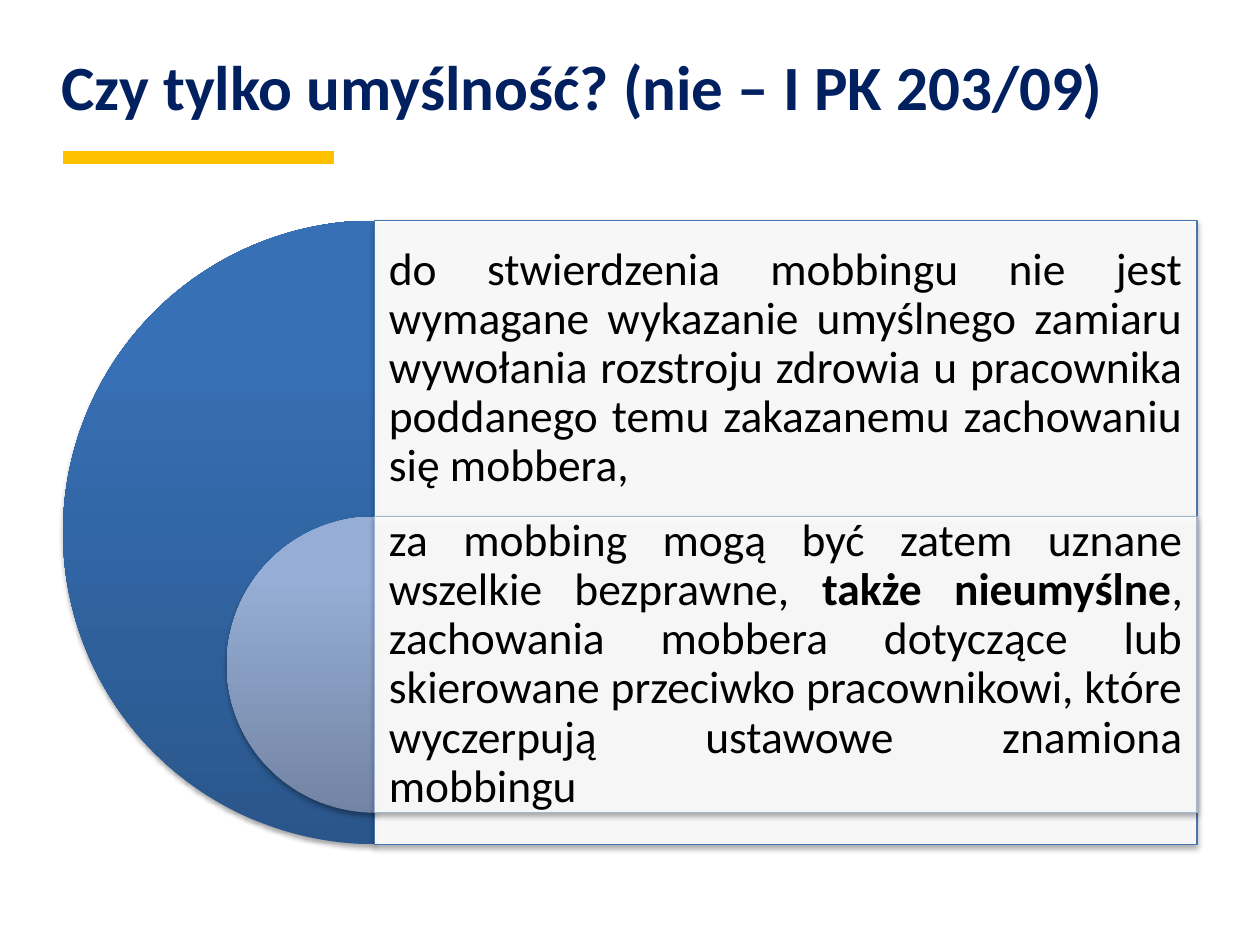
from lxml.etree import SubElement
from pptx import Presentation
from pptx.dml.color import RGBColor
from pptx.enum.shapes import MSO_CONNECTOR, MSO_SHAPE
from pptx.enum.text import MSO_ANCHOR, PP_ALIGN
from pptx.oxml.ns import qn
from pptx.util import Pt

CENTER_X = 214.2
RIGHT = 684
TOP = 126
OUTER = 356.4
INNER = 169.2

FIRST = [("do stwierdzenia mobbingu nie jest wymagane wykazanie umyślnego zamiaru "
          "wywołania rozstroju zdrowia u pracownika poddanego temu zakazanemu "
          "zachowaniu się mobbera,", False)]
SECOND = [("za mobbing mogą być zatem uznane wszelkie bezprawne, ", False),
          ("także nieumyślne", True),
          (", zachowania mobbera dotyczące lub skierowane przeciwko pracownikowi, "
           "które wyczerpują ustawowe znamiona mobbingu", False)]


def rgb(color):
    return RGBColor.from_string(color)


def add_shadow(sp):
    sp.shadow.inherit = False
    effects = sp._element.spPr.find(qn("a:effectLst"))
    shadow = SubElement(effects, qn("a:outerShdw"), blurRad=str(Pt(3.1)),
                        dist=str(Pt(1.8)), dir="5400000", rotWithShape="0")
    color = SubElement(shadow, qn("a:srgbClr"), val="000000")
    SubElement(color, qn("a:alpha"), val="35000")


def add_half_disc(s, top, size, colors):
    sp = s.shapes.add_shape(MSO_SHAPE.PIE, Pt(CENTER_X - size / 2), Pt(top),
                            Pt(size), Pt(size))
    sp.adjustments[0] = 54
    sp.adjustments[1] = 162
    sp.line.fill.background()
    sp.fill.gradient()
    sp.fill.gradient_angle = 90
    stops = sp._element.spPr.find(qn("a:gradFill")).find(qn("a:gsLst"))
    for stop in list(stops):
        stops.remove(stop)
    for pos, color in zip((0, 80000, 100000), colors):
        stop = SubElement(stops, qn("a:gs"), pos=str(pos))
        SubElement(stop, qn("a:srgbClr"), val=color)
    add_shadow(sp)


def add_panel(s, top, height, line_color):
    sp = s.shapes.add_shape(MSO_SHAPE.RECTANGLE, Pt(CENTER_X), Pt(top),
                            Pt(RIGHT - CENTER_X), Pt(height))
    sp.fill.solid()
    sp.fill.fore_color.rgb = rgb("FFFFFF")
    color = sp._element.spPr.find(qn("a:solidFill")).find(qn("a:srgbClr"))
    SubElement(color, qn("a:alpha"), val="90000")
    sp.line.color.rgb = rgb(line_color)
    sp.line.width = Pt(0.75)
    add_shadow(sp)


def add_text(s, left, top, width, height, runs, size, color):
    tf = s.shapes.add_textbox(Pt(left), Pt(top), Pt(width), Pt(height)).text_frame
    tf.word_wrap = True
    tf.vertical_anchor = MSO_ANCHOR.MIDDLE
    p = tf.paragraphs[0]
    for text, bold in runs:
        r = p.add_run()
        r.text = text
        r.font.name = "Calibri"
        r.font.size = Pt(size)
        r.font.bold = bold
        r.font.color.rgb = rgb(color)
    return tf


def add_body(s, top, runs):
    tf = add_text(s, CENTER_X, top, RIGHT - CENTER_X, INNER, runs, 26, "000000")
    tf.margin_left = tf.margin_right = tf.margin_top = tf.margin_bottom = Pt(8)
    p = tf.paragraphs[0]
    p.alignment = PP_ALIGN.JUSTIFY
    p.line_spacing = 0.9


def add_rule(s, left, right, y, color, width):
    line = s.shapes.add_connector(MSO_CONNECTOR.STRAIGHT, Pt(left), Pt(y),
                                  Pt(right), Pt(y))
    line.line.color.rgb = rgb(color)
    line.line.width = Pt(width)
    SubElement(line._element.spPr, qn("a:effectLst"))


def main():
    prs = Presentation()
    prs.slide_width = Pt(720)
    prs.slide_height = Pt(540)
    s = prs.slides.add_slide(prs.slide_layouts[6])

    add_text(s, 28, 24, 646.5, 50,
             [("Czy tylko umyślność? (nie – I PK 203/09)", True)], 36, "002060")

    add_half_disc(s, TOP, OUTER, ("2A568B", "3770B5", "3570B8"))
    add_panel(s, TOP, OUTER, "4875AC")
    add_body(s, TOP, FIRST)

    inner_top = TOP + INNER
    add_half_disc(s, inner_top, INNER, ("7385A4", "96ADD5", "95ADD7"))
    add_panel(s, inner_top, INNER, "A2B4D4")
    add_body(s, inner_top, SECOND)

    add_rule(s, 36, 191, 90, "FFC000", 7)
    prs.save("out.pptx")


if __name__ == "__main__":
    main()
